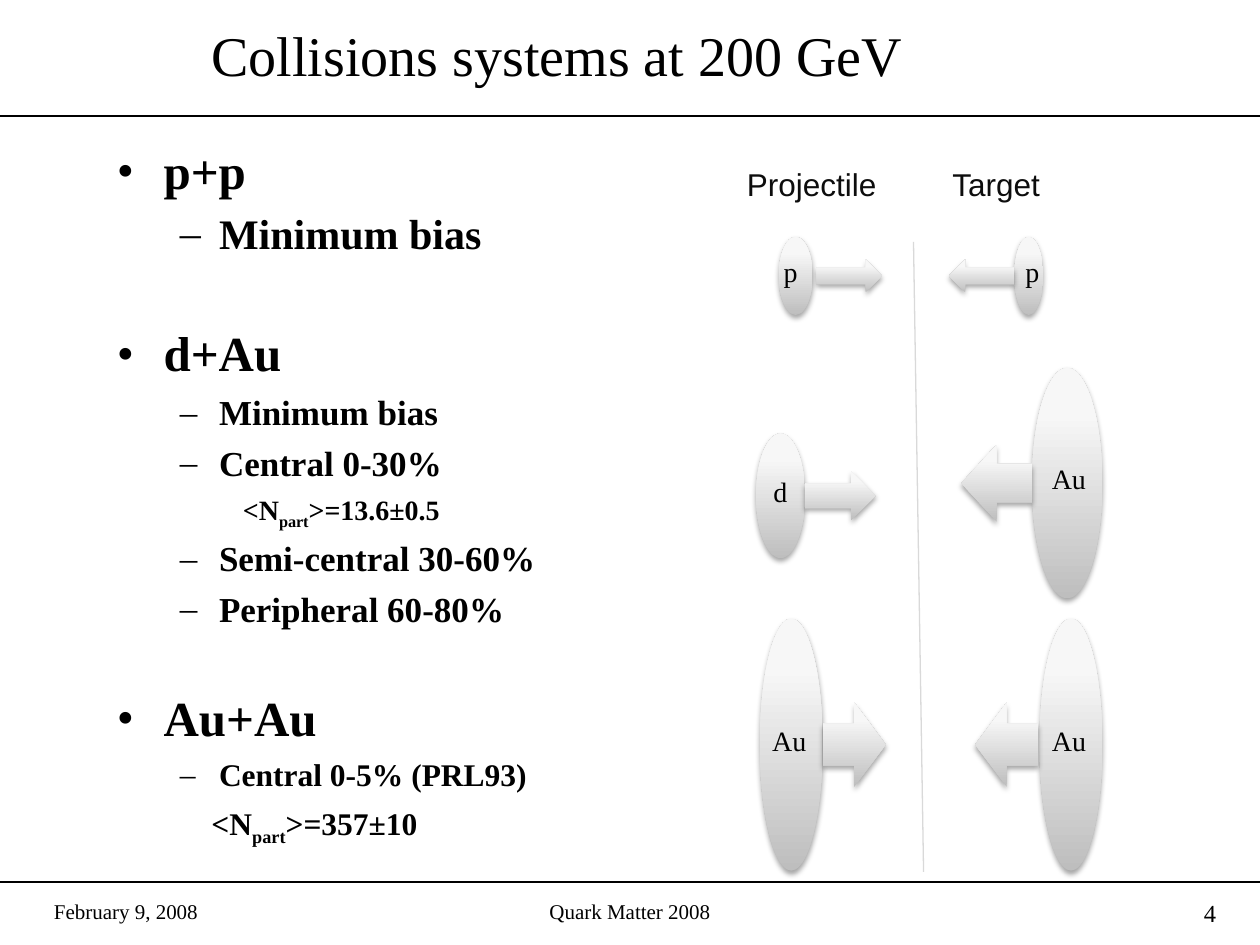
from lxml import etree
from pptx import Presentation
from pptx.dml.color import RGBColor
from pptx.enum.shapes import MSO_CONNECTOR, MSO_SHAPE
from pptx.enum.text import MSO_ANCHOR, MSO_AUTO_SIZE, PP_ALIGN
from pptx.oxml import parse_xml
from pptx.oxml.ns import nsdecls, qn
from pptx.util import Inches, Pt

SERIF, SANS = "Times New Roman", "Arial"
BLACK = "000000"

# level: (text left, first-line indent, bullet, space before)
LEVELS = {
    "system": (0.37, -0.37, "•", 7),
    "class": (0.81, -0.31, "–", 6),
    "count": (1, 0, None, 5),
    "class count": (0.75, 0, None, 6),
}
# level, size, extra space before, runs of (text, is subscript)
OUTLINE = [
    ("system", 28, 0, [("p+p", False)]),
    ("class", 24, 0, [("Minimum bias", False)]),
    ("system", 28, 32, [("d+Au", False)]),
    ("class", 20, 0, [("Minimum bias", False)]),
    ("class", 20, 0, [("Central 0-30%", False)]),
    ("count", 16, 0, [("<N", False), ("part", True), (">=13.6±0.5", False)]),
    ("class", 20, 0, [("Semi-central 30-60%", False)]),
    ("class", 20, 0, [("Peripheral 60-80%", False)]),
    ("system", 28, 28, [("Au+Au", False)]),
    ("class", 18, 0, [("Central 0-5% (PRL93)", False)]),
    ("class count", 18, 0, [("<N", False), ("part", True), (">=357±10", False)]),
]
# label, ellipse box, arrow (left, width, height), label (left, width)
COLLISIONS = [
    (("p", (6.18, 1.88, 0.27, 0.62), (6.48, 0.52, 0.26), (6.12, 0.38)),
     ("p", (8.05, 1.88, 0.23, 0.62), (7.53, 0.52, 0.26), (8.04, 0.38))),
    (("d", (6, 3.44, 0.39, 0.99), (6.39, 0.56, 0.39), (6.04, 0.38)),
     ("Au", (8.19, 2.92, 0.56, 1.83), (7.63, 0.56, 0.61), (8.25, 0.5))),
    (("Au", (6.03, 4.91, 0.5, 2), (6.53, 0.5, 0.67), (6.03, 0.55)),
     ("Au", (8.25, 4.91, 0.5, 2), (7.74, 0.5, 0.67), (8.25, 0.58))),
]


def rgb(color):
    return RGBColor.from_string(color)


def inches(box):
    return [Inches(v) for v in box]


def format_font(font, size, name=SERIF, color=BLACK, bold=False):
    for key, value in {"size": Pt(size), "name": name, "bold": bold}.items():
        setattr(font, key, value)
    font.color.rgb = rgb(color)


def add_text(shapes, box, text, size, align=PP_ALIGN.LEFT, name=SERIF, color=BLACK):
    tf = shapes.add_textbox(*inches(box)).text_frame
    tf.word_wrap = True
    p = tf.paragraphs[0]
    p.alignment = align
    r = p.add_run()
    r.text = text
    format_font(r.font, size, name, color)
    return p


def add_line(shapes, start, end, color=BLACK):
    line = shapes.add_connector(MSO_CONNECTOR.STRAIGHT, *inches(start + end))
    line.line.color.rgb = rgb(color)
    line.line.width = Pt(0.75)
    etree.SubElement(line._element.spPr, qn("a:effectLst"))


def add_body(shapes, kind, box):
    """Add a grey gradient shape with a soft shadow below it."""
    sp = shapes.add_shape(kind, *inches(box))
    sp.line.fill.background()
    sp.fill.gradient()
    sp.fill.gradient_angle = 90
    for stop, (position, color) in zip(sp.fill.gradient_stops,
                                       [(0, "BEBEBE"), (0.8, "F7F7F7")]):
        stop.position = position
        stop.color.rgb = rgb(color)
    sp._element.spPr.append(parse_xml(
        f'<a:effectLst {nsdecls("a")}><a:outerShdw blurRad="{Pt(3.1)}" '
        f'dist="{Pt(1.8)}" dir="5400000" rotWithShape="0"><a:srgbClr val="000000">'
        '<a:alpha val="35000"/></a:srgbClr></a:outerShdw></a:effectLst>'))


def add_nucleus(shapes, arrow_kind, label, box, arrow, label_span):
    middle = box[1] + box[3] / 2
    left, width, height = arrow
    add_body(shapes, MSO_SHAPE.OVAL, box)
    add_body(shapes, arrow_kind, (left, middle - height / 2, width, height))
    add_text(shapes, (label_span[0], middle - 0.22, label_span[1], 0.39), label, 16)


def add_title(s, box):
    title = s.shapes.title
    title.left, title.top, title.width, title.height = inches(box)
    tf = title.text_frame
    tf.text = "Collisions systems at 200 GeV"
    tf.auto_size = MSO_AUTO_SIZE.NONE
    tf.vertical_anchor = MSO_ANCHOR.MIDDLE
    p = tf.paragraphs[0]
    p.alignment = PP_ALIGN.LEFT
    p.line_spacing = 0.95
    format_font(p.runs[0].font, 32)


def add_outline(s, box):
    tf = s.shapes.add_textbox(*inches(box)).text_frame
    tf.word_wrap = True
    for i, (level, size, extra, runs) in enumerate(OUTLINE):
        left, indent, bullet, before = LEVELS[level]
        p = tf.add_paragraph() if i else tf.paragraphs[0]
        p.line_spacing = 0.95
        p.space_before = Pt(before + extra if i else 0)
        pPr = p._p.get_or_add_pPr()
        pPr.set("marL", str(Inches(left)))
        pPr.set("indent", str(Inches(indent)))
        if bullet:
            etree.SubElement(pPr, qn("a:buFont"), typeface=SERIF)
            etree.SubElement(pPr, qn("a:buChar"), char=bullet)
        for text, subscript in runs:
            r = p.add_run()
            r.text = text
            format_font(r.font, size, bold=True)
            if subscript:
                r._r.get_or_add_rPr().set("baseline", "-25000")


def add_diagram(s, box):
    left, top, width, height = box
    for projectile, target in COLLISIONS:
        group = s.shapes.add_group_shape().shapes
        add_nucleus(group, MSO_SHAPE.RIGHT_ARROW, *projectile)
        add_nucleus(group, MSO_SHAPE.LEFT_ARROW, *target)
    p = add_text(s.shapes, (left, top, 2.67, 0.4), "Projectile\tTarget", 18,
                 name=SANS, color="0D0D0D")
    tabs = etree.SubElement(p._p.get_or_add_pPr(), qn("a:tabLst"))
    etree.SubElement(tabs, qn("a:tab"), pos=str(Inches(1.63)), algn="l")
    middle = left + width / 2
    add_line(s.shapes, (middle - 0.04, top + 0.66), (middle + 0.04, top + height), "D9D9D9")


def add_footer(s, top):
    for left, width, text, size, align in [
            (0.33, 2.33, "February 9, 2008", 12, PP_ALIGN.LEFT),
            (3.42, 3.16, "Quark Matter 2008", 12, PP_ALIGN.CENTER),
            (7.42, 2.33, "4", 14, PP_ALIGN.RIGHT)]:
        add_text(s.shapes, (left, top, width, 0.35), text, size, align)


def main():
    prs = Presentation()
    prs.slide_width, prs.slide_height = Inches(10), Inches(7.5)
    s = prs.slides.add_slide(prs.slide_layouts[5])
    for y in (0.92, 7):
        add_line(s.shapes, (0, y), (10, y))
    add_title(s, (1.58, 0.08, 7.16, 0.75))
    add_outline(s, (0.83, 1.1, 3.92, 5.76))
    add_footer(s, 7.08)
    add_diagram(s, (5.83, 1.26, 2.92, 5.66))
    prs.save("out.pptx")


if __name__ == "__main__":
    main()
